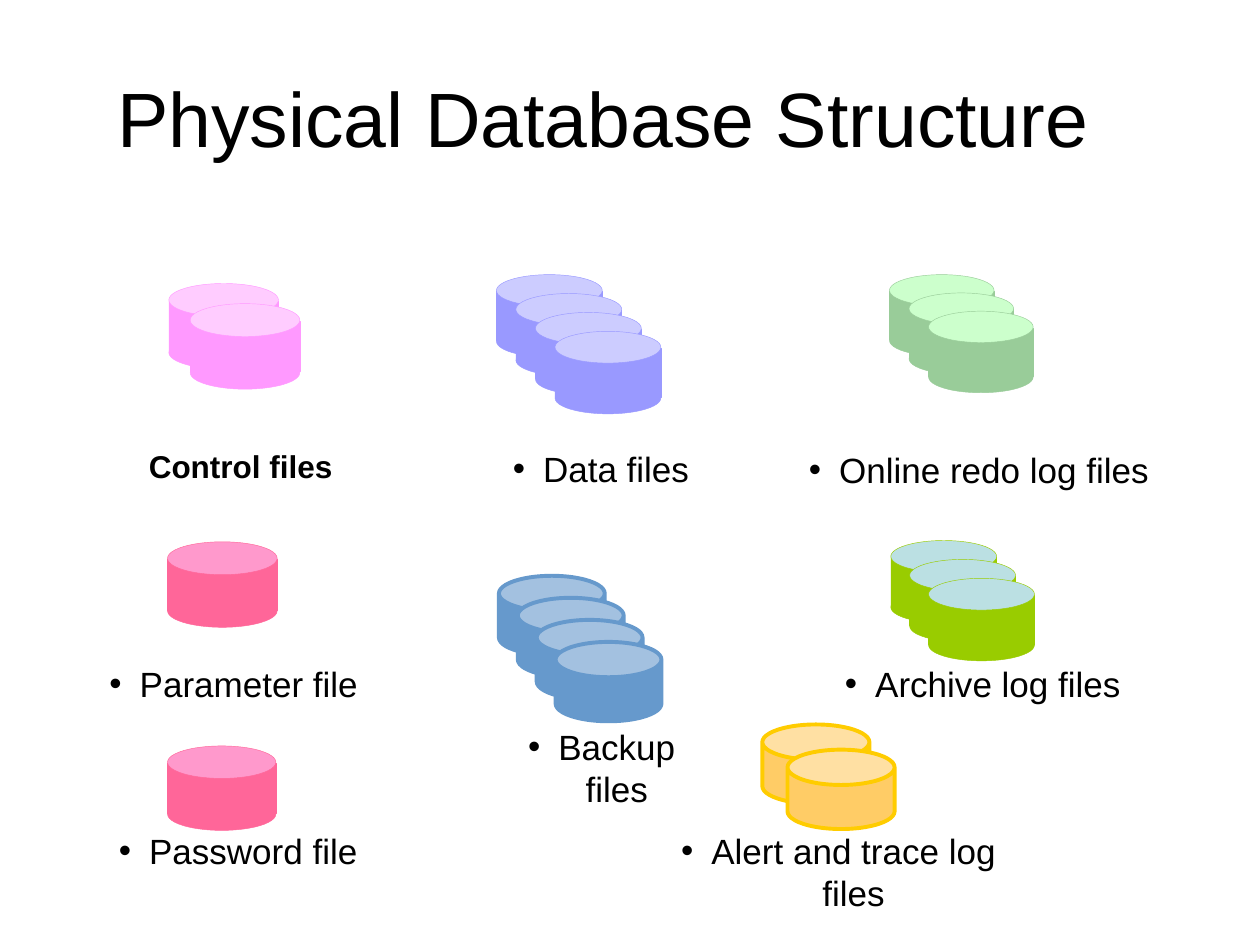
from lxml.etree import SubElement
from pptx import Presentation
from pptx.dml.color import RGBColor
from pptx.enum.shapes import MSO_SHAPE as Shape
from pptx.enum.text import MSO_ANCHOR as Anchor, MSO_AUTO_SIZE as AutoSize, PP_ALIGN as Align
from pptx.oxml.ns import qn
from pptx.util import Inches, Pt

TITLE = "Physical Database Structure"
FONT, BLACK = "Arial", "000000"
BULLET_INDENT = 0.24

# Disk stacks: left, top, disk width, step right, step down, count, side, lid
DISK_STACKS = [
    (7.06, 2.18, 0.83, 0.155, 0.145, 3, "99CC99", "CCFFCC"),  # online redo logs
    (1.33, 5.92, 0.86, 0, 0, 1, "FF6699", "FF99CC"),          # password
    (1.33, 4.30, 0.87, 0, 0, 1, "FF6699", "FF99CC"),          # parameter
    (1.34, 2.25, 0.87, 0.17, 0.16, 2, "FF99FF", "FFCCFF"),    # control
    (3.94, 2.18, 0.84, 0.155, 0.15, 4, "9999FF", "CCCCFF"),   # data
    (7.07, 4.29, 0.84, 0.15, 0.15, 3, "99CC00", "BBE0E3"),    # archive logs
]

# Disk parts: shape, top and height as shares of the disk width, is a lid
DISK_PARTS = [
    (Shape.RECTANGLE, 0.16, 0.46, False),
    (Shape.OVAL, 0, 0.30, True),
    (Shape.OVAL, 0.48, 0.30, False),
]

# Can stacks: left, top, can width, step right, step down, count, fill, outline
CAN_STACKS = [
    (6.05, 5.75, 0.85, 0.20, 0.20, 2, "FFCC66", "FFCC00"),    # alert and trace
    (3.96, 4.57, 0.84, 0.15, 0.175, 4, "6699CC", "6699CC"),   # backup
]
CAN_HEIGHT, CAN_LID = 0.63, 0.445

# Bulleted labels: text, left, top, width
LABELS = [
    ("Online redo log files", 6.34, 3.55, 2.86),
    ("Password file", 0.75, 6.57, 2.28),
    ("Parameter file", 0.77, 5.25, 2.17),
    ("Archive log files", 6.59, 5.25, 2.42),
    ("Data files", 4.02, 3.54, 1.50),
    ("Alert and trace log files", 5.17, 6.57, 2.97),
    ("Backup files", 3.93, 5.75, 1.69),
]
HEADING = ("Control files", 1.10, 3.56, 1.62)


def color(hex_value):
    return RGBColor.from_string(hex_value)


def box(*lengths):
    return [Inches(length) for length in lengths]


def apply(target, formats):
    for name, value in formats.items():
        setattr(target, name, value)


def set_margins(frame, across, down):
    apply(frame, {"margin_left": Inches(across), "margin_right": Inches(across),
                  "margin_top": Inches(down), "margin_bottom": Inches(down)})


def write(paragraph, text, size, bold=False):
    paragraph.alignment = Align.CENTER
    run = paragraph.add_run()
    run.text = text
    apply(run.font, {"name": FONT, "size": Pt(size), "bold": bold})
    run.font.color.rgb = color(BLACK)


def add_solid(parent, kind, place, fill, line, line_width):
    solid = parent.shapes.add_shape(kind, *box(*place))
    solid.shadow.inherit = False
    solid.fill.solid()
    solid.fill.fore_color.rgb = color(fill)
    solid.line.color.rgb = color(line)
    solid.line.width = Pt(line_width)
    return solid


def add_label(slide, text, left, top, width, height, size, margins, bold=False):
    frame = slide.shapes.add_textbox(*box(left, top, width, height)).text_frame
    apply(frame, {"word_wrap": True, "auto_size": AutoSize.SHAPE_TO_FIT_TEXT})
    set_margins(frame, *margins)
    write(frame.paragraphs[0], text, size, bold)
    return frame.paragraphs[0]


def add_bullet(paragraph):
    properties = paragraph._p.get_or_add_pPr()
    indent = Inches(BULLET_INDENT)
    properties.set("marL", str(indent))
    properties.set("indent", str(-indent))
    SubElement(properties, qn("a:buFont")).set("typeface", FONT)
    SubElement(properties, qn("a:buChar")).set("char", "•")


def main():
    deck = Presentation()
    apply(deck, {"slide_width": Inches(10), "slide_height": Inches(7.5)})
    slide = deck.slides.add_slide(deck.slide_layouts[5])

    # Title, its text set a little left of the centre
    title = slide.shapes.title
    apply(title, dict(zip(("left", "top", "width", "height"), box(0.5, 0.3, 9, 1.25))))
    apply(title.text_frame, {"vertical_anchor": Anchor.MIDDLE, "word_wrap": True,
                             "auto_size": AutoSize.NONE, "margin_right": Inches(0.52)})
    write(title.text_frame.paragraphs[0], TITLE, 44)

    # Disk stacks
    for left, top, width, right, down, count, side, lid in DISK_STACKS:
        stack = slide.shapes.add_group_shape()
        for i in range(count):
            for kind, offset, height, is_lid in DISK_PARTS:
                place = (left + i * right, top + i * down + offset * width,
                         width, height * width)
                add_solid(stack, kind, place, lid if is_lid else side, side, 0.25)

    # Can stacks
    for left, top, width, right, down, count, fill, outline in CAN_STACKS:
        stack = slide.shapes.add_group_shape()
        for i in range(count):
            place = (left + i * right, top + i * down, width, CAN_HEIGHT)
            can = add_solid(stack, Shape.CAN, place, fill, outline, 2.25)
            can.adjustments[0] = CAN_LID

    # Labels
    for text, left, top, width in LABELS:
        add_bullet(add_label(slide, text, left, top, width, 0.36, 20, (0.01, 0.01)))
    heading = add_label(slide, *HEADING, 0.32, 18, (0.06, 0.03), bold=True)
    heading.line_spacing = 0.85

    deck.save("out.pptx")


if __name__ == "__main__":
    main()
